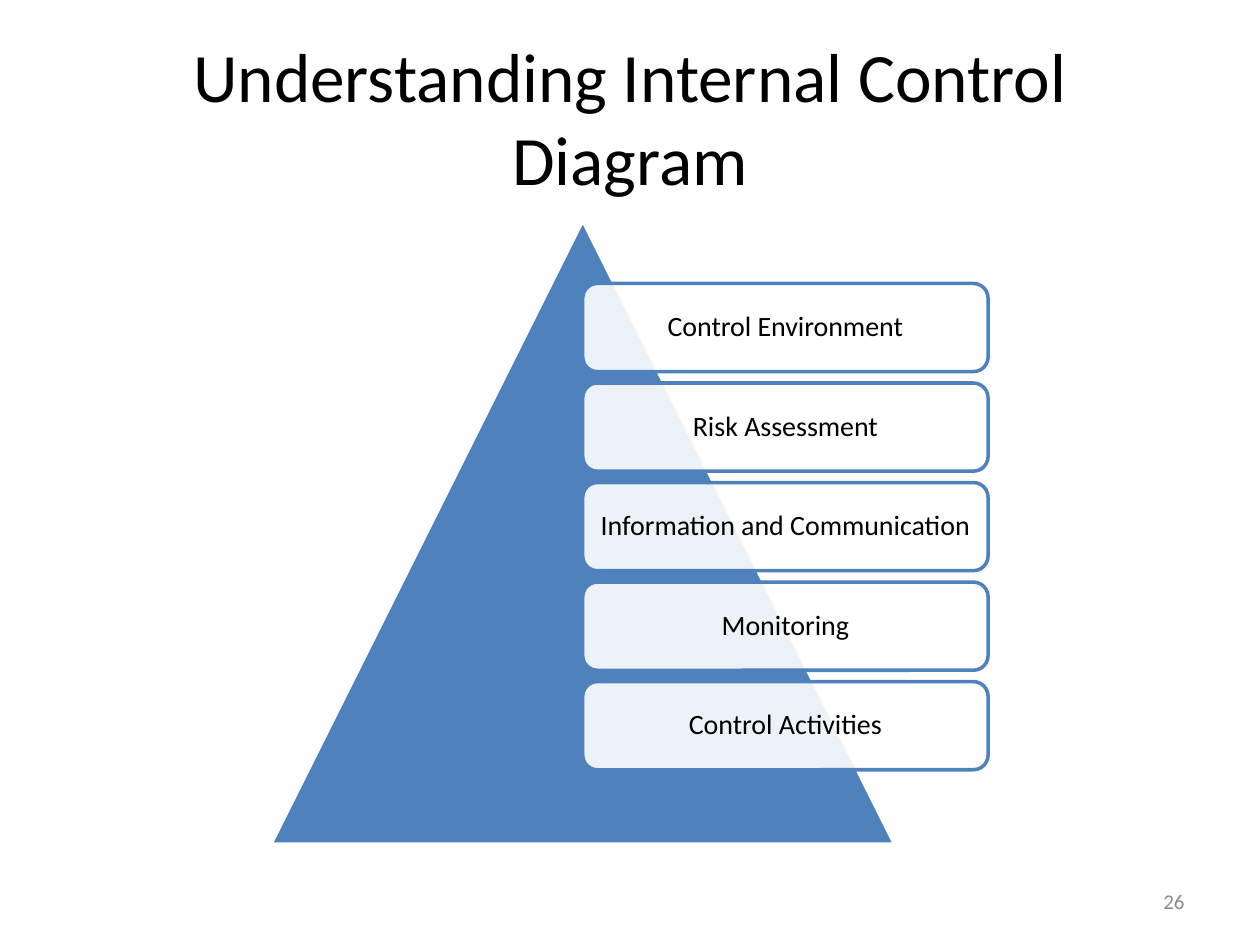
from lxml.etree import SubElement
from pptx import Presentation
from pptx.dml.color import RGBColor
from pptx.enum.shapes import MSO_SHAPE as SHAPE
from pptx.enum.text import MSO_ANCHOR as ANCHOR, PP_ALIGN as ALIGN
from pptx.oxml.ns import qn
from pptx.util import Inches, Pt

COLORS = {"blue": "4F81BD", "white": "FFFFFF", "black": "000000", "gray": "8C8C8C"}
COMPONENTS = ["Control Environment", "Risk Assessment", "Information and Communication",
              "Monitoring", "Control Activities"]


def rgb(name):
    """Return the named palette colour."""
    return RGBColor.from_string(COLORS[name])


def write(shape, text, size, color, align=ALIGN.CENTER):
    """Write one vertically centred paragraph and return its text frame."""
    tf = shape.text_frame
    tf.word_wrap = True
    tf.vertical_anchor = ANCHOR.MIDDLE
    p = tf.paragraphs[0]
    p.alignment = align
    r = p.add_run()
    r.text = text
    r.font.name = "Calibri"
    r.font.size = Pt(size)
    r.font.color.rgb = rgb(color)
    return tf


def add_text(s, box, *style):
    """Add a text box in the given box."""
    write(s.shapes.add_textbox(*map(Inches, box)), *style)


def add_block(shapes, kind, box, fill, line):
    """Add a filled, outlined shape without a shadow."""
    sp = shapes.add_shape(kind, *map(Inches, box))
    sp.shadow.inherit = False
    sp.fill.solid()
    sp.fill.fore_color.rgb = rgb(fill)
    sp.line.color.rgb = rgb(line)
    sp.line.width = Pt(2)
    return sp


def add_label(shapes, box, text):
    """Add a translucent rounded label."""
    sp = add_block(shapes, SHAPE.ROUNDED_RECTANGLE, box, "white", "blue")
    color = sp.fill._xPr.find(qn("a:solidFill"))[0]
    SubElement(color, qn("a:alpha"), val="90000")
    tf = write(sp, text, 16, "black")
    tf.margin_left = tf.margin_right = tf.margin_top = tf.margin_bottom = Inches(0.07)
    tf.paragraphs[0].line_spacing = 0.9


def add_pyramid(s, x, y, size, labels):
    """Add a triangle with a column of labels starting at its axis."""
    shapes = s.shapes.add_group_shape().shapes
    add_block(shapes, SHAPE.ISOSCELES_TRIANGLE, (x, y, size, size), "blue", "white")
    width, height, pitch = 0.65 * size, 0.7, 0.79
    for i, text in enumerate(labels):
        add_label(shapes, (x + size / 2, y + 0.5 + i * pitch, width, height), text)


def main():
    """Build and save the slide."""
    prs = Presentation()
    prs.slide_width, prs.slide_height = Inches(10), Inches(7.5)
    s = prs.slides.add_slide(prs.slide_layouts[6])
    add_text(s, (0.5, 0.3, 9, 1.25), "Understanding Internal Control Diagram", 39.6, "black")
    add_pyramid(s, 2.15, 1.75, 4.95, COMPONENTS)
    add_text(s, (7.17, 6.95, 2.33, 0.4), "26", 12, "gray", ALIGN.RIGHT)
    prs.save("out.pptx")


if __name__ == "__main__":
    main()
